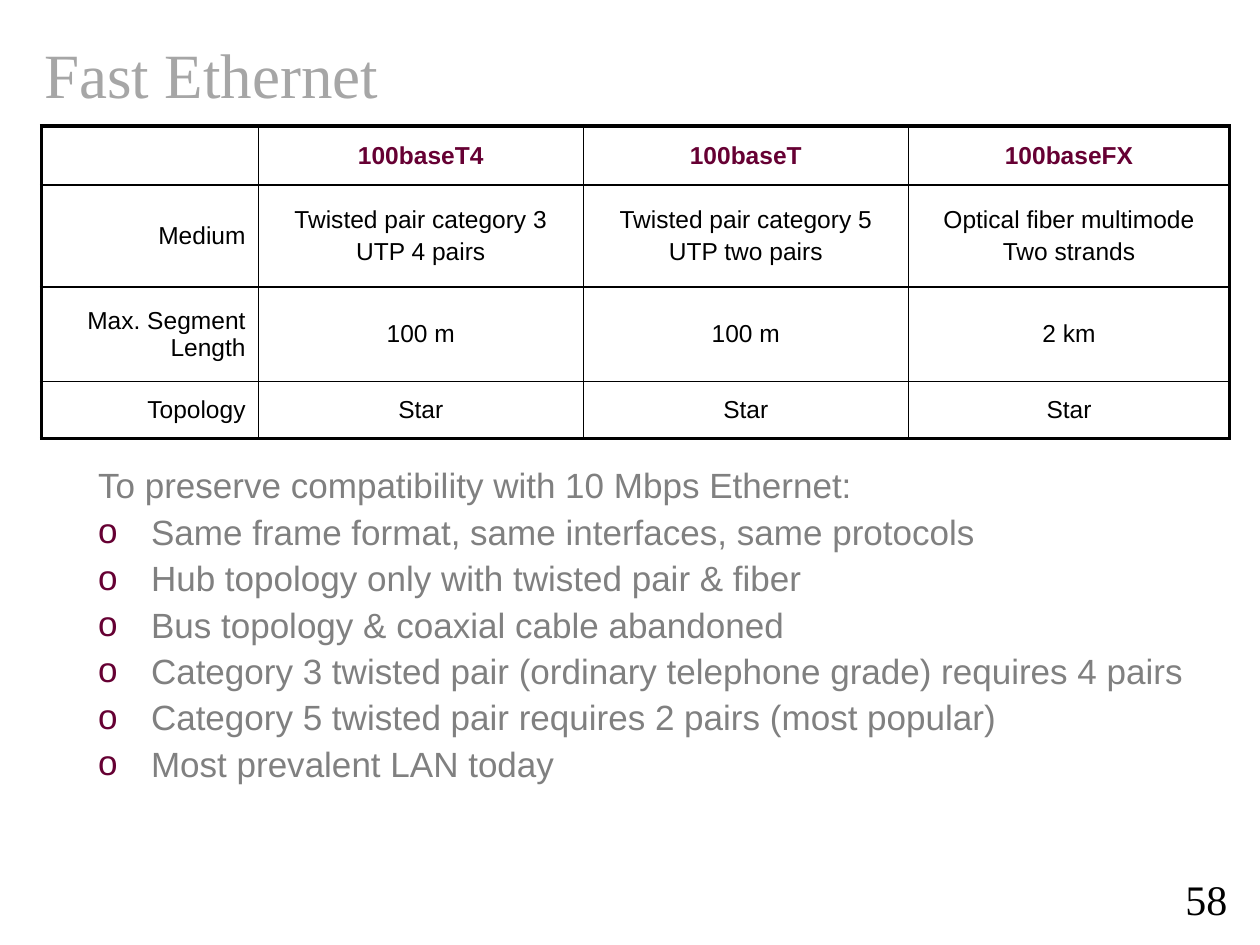
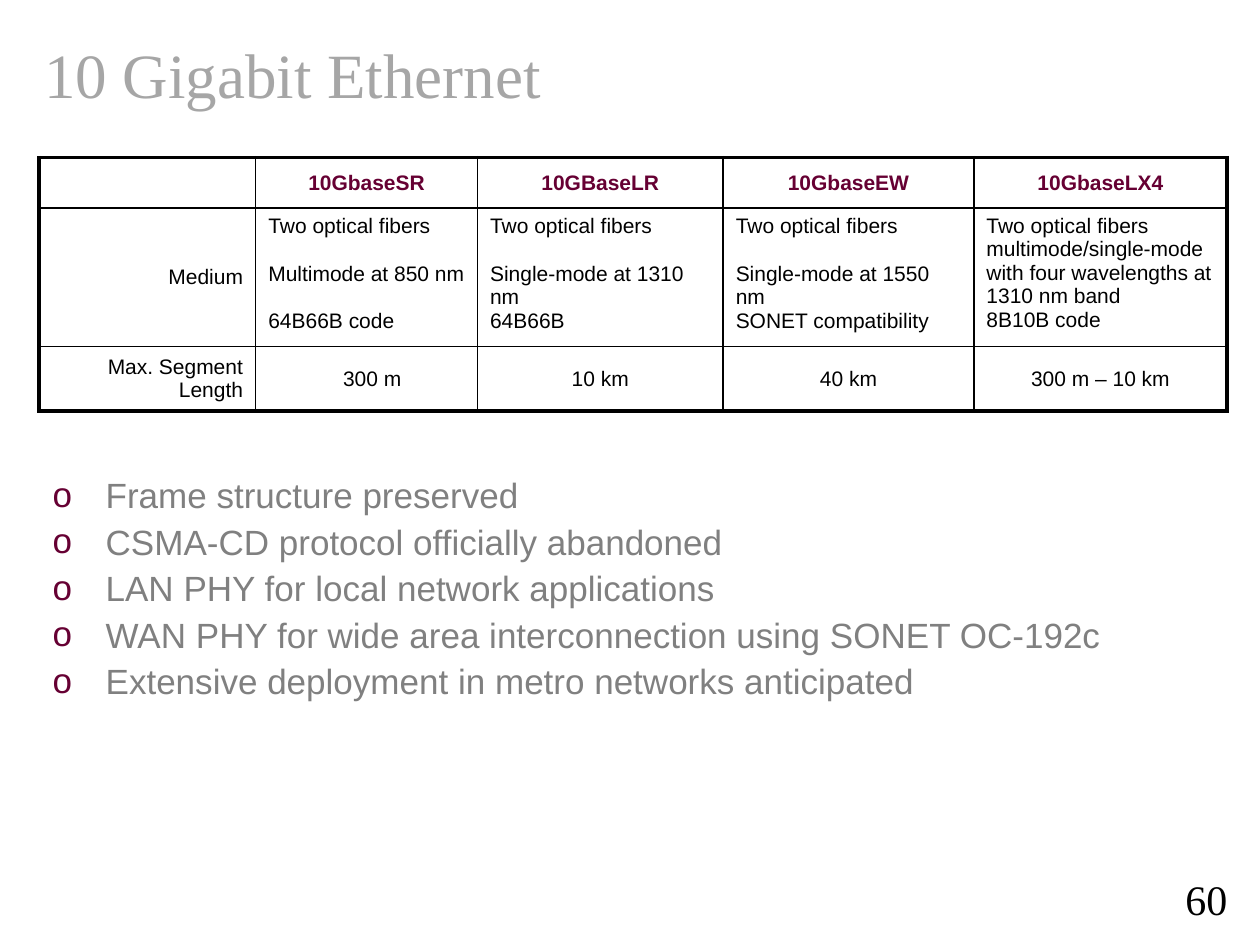
from pptx import Presentation as Deck
from pptx.dml.color import RGBColor as Rgb
from pptx.enum.text import MSO_ANCHOR as Anchor, PP_ALIGN as Align
from pptx.util import Inches, Pt
from pptx.oxml import parse_xml as to_xml
from pptx.oxml.ns import nsdecls as spaces

INK = {"title": "A6A6A6", "body": "808080", "wine": "660033", "black": "000000"}

# Shared text looks: font values, then colour
LOOKS = {
    "title": ({"name": "Times New Roman", "size": Pt(36)}, "title"),
    "page": ({"name": "Times New Roman", "size": Pt(24)}, "black"),
    "body": ({"name": "Arial", "size": Pt(20)}, "body"),
    "head": ({"name": "Arial", "bold": True}, "wine"),
    "cell": ({"name": "Arial", "bold": False}, "black"),
}

SLIDES = [
    {
        "title": "Fast Ethernet", "page": "58",
        "at": (0.33, 1), "size": 14, "gap": 2.8, "flow": "center",
        "cols": [1.72, 2.58, 2.58, 2.55], "rows": [0.47, 0.81, 0.75, 0.45],
        "grid": [
            ["", "100baseT4", "100baseT", "100baseFX"],
            ["Medium", "Twisted pair category 3\nUTP 4 pairs",
             "Twisted pair category 5\nUTP two pairs",
             "Optical fiber multimode\nTwo strands"],
            ["Max. Segment Length", "100 m", "100 m", "2 km"],
            ["Topology", "Star", "Star", "Star"],
        ],
        "box": (0.68, 3.67, 9.32, 2.75),
        "lead": "To preserve compatibility with 10 Mbps Ethernet:",
        "points": [
            "Same frame format, same interfaces, same protocols",
            "Hub topology only with twisted pair & fiber",
            "Bus topology & coaxial cable abandoned",
            "Category 3 twisted pair (ordinary telephone grade) requires 4 pairs",
            "Category 5 twisted pair requires 2 pairs (most popular)",
            "Most prevalent LAN today",
        ],
    },
    {
        "title": "10 Gigabit Ethernet", "page": "60",
        "at": (0.31, 1.25), "size": 12, "gap": 0, "flow": "left",
        "cols": [1.72, 1.76, 1.95, 1.99, 2.01], "rows": [0.3, 1.03, 0.51],
        "grid": [
            ["", "10GbaseSR", "10GBaseLR", "10GbaseEW", "10GbaseLX4"],
            ["Medium",
             "Two optical fibers\n\nMultimode at 850 nm\n\n64B66B code",
             "Two optical fibers\n\nSingle-mode at 1310 nm\n64B66B",
             "Two optical fibers\n\nSingle-mode at 1550 nm\nSONET compatibility",
             "Two optical fibers multimode/single-mode with four wavelengths "
             "at 1310 nm band\n8B10B code"],
            ["Max. Segment Length", "300 m", "10 km", "40 km", "300 m – 10 km"],
        ],
        "box": (0.32, 3.75, 9.32, 2.93),
        "lead": None,
        "points": [
            "Frame structure preserved",
            "CSMA-CD protocol officially abandoned",
            "LAN PHY for local network applications",
            "WAN PHY for wide area interconnection using SONET OC-192c",
            "Extensive deployment in metro networks anticipated",
        ],
    },
]


def write(par, text, look, **form):
    """Fill a paragraph; form holds its paragraph settings."""
    font, ink = LOOKS[look]
    for key, val in form.items():
        setattr(par, key, val)
    run = par.add_run()
    run.text = text
    for key, val in font.items():
        setattr(run.font, key, val)
    run.font.color.rgb = Rgb.from_string(INK[ink])
    return run


def frame(cell, thick):
    """Draw the four cell borders, thick on the named sides."""
    props = cell._tc.get_or_add_tcPr()
    for spot, side in enumerate("LRTB"):
        width = Pt(2.25 if side in thick else 1)
        props.insert(spot, to_xml(
            f'<a:ln{side} {spaces("a")} w="{width}"><a:solidFill>'
            f'<a:srgbClr val="{INK["black"]}"/></a:solidFill></a:ln{side}>'))


deck = Deck()
deck.slide_width, deck.slide_height = Inches(10), Inches(7.5)

for data in SLIDES:
    slide = deck.slides.add_slide(deck.slide_layouts[5])

    # Title
    title = slide.shapes.title
    spot = {"left": 0.25, "top": 0.25, "width": 9.33, "height": 0.67}
    for key, val in spot.items():
        setattr(title, key, Inches(val))
    title.text_frame.vertical_anchor = Anchor.MIDDLE
    write(title.text_frame.paragraphs[0], data["title"], "title",
          alignment=Align.LEFT)

    # Page number
    page = slide.shapes.add_textbox(*map(Inches, (8.59, 6.88, 1.25, 0.51)))
    page.text_frame.word_wrap = True
    write(page.text_frame.paragraphs[0], data["page"], "page",
          alignment=Align.RIGHT)

    # Table
    cols, rows = data["cols"], data["rows"]
    area = (*data["at"], sum(cols), sum(rows))
    table = slide.shapes.add_table(
        len(rows), len(cols), *map(Inches, area)).table
    table.first_row = table.horz_banding = False
    for col, width in zip(table.columns, cols):
        col.width = Inches(width)
    for row, height in zip(table.rows, rows):
        row.height = Inches(height)

    for r, line in enumerate(data["grid"]):
        for c, text in enumerate(line):
            cell = table.cell(r, c)
            cell.fill.background()
            ends = {"L": c == 0, "R": c == len(cols) - 1,
                    "T": r == 0, "B": r == len(rows) - 1}
            frame(cell, [side for side, hit in ends.items() if hit])
            left = data["flow"] == "left" and r == 1 and c > 0
            cell.vertical_anchor = Anchor.TOP if left else Anchor.MIDDLE
            side = (Align.RIGHT if c == 0 else
                    Align.LEFT if left else Align.CENTER)
            if not text:
                continue
            # A double break in the data is a gap one line high
            par = None
            for block in text.split("\n\n"):
                gap = data["size"] * 1.15
                for part in block.split("\n"):
                    if par is None:
                        par, gap = cell.text_frame.paragraphs[0], 0
                    else:
                        par = cell.text_frame.add_paragraph()
                    run = write(par, part, "cell" if r else "head",
                                alignment=side, space_before=Pt(gap))
                    run.font.size = Pt(data["size"])
                    gap = data["gap"]

    if data["flow"] == "left":
        table.cell(2, 1).margin_left = Inches(0.19)

    # Body list
    body = slide.shapes.add_textbox(*map(Inches, data["box"])).text_frame
    body.word_wrap = True
    lead = [data["lead"]] if data["lead"] else []
    for n, text in enumerate(lead + data["points"]):
        par = body.add_paragraph() if n else body.paragraphs[0]
        props = par._p.get_or_add_pPr()
        props.set("marL", str(Inches(0.42)))
        props.set("indent", str(-Inches(0.42)))
        if n >= len(lead):
            for mark in (f'<a:buClr {spaces("a")}><a:srgbClr val="{INK["wine"]}"/></a:buClr>',
                         f'<a:buFont {spaces("a")} typeface="Arial"/>',
                         f'<a:buChar {spaces("a")} char="o"/>'):
                props.append(to_xml(mark))
        write(par, text, "body", line_spacing=0.9,
              space_before=Pt(4.9 if n else 0))

deck.save("out.pptx")
